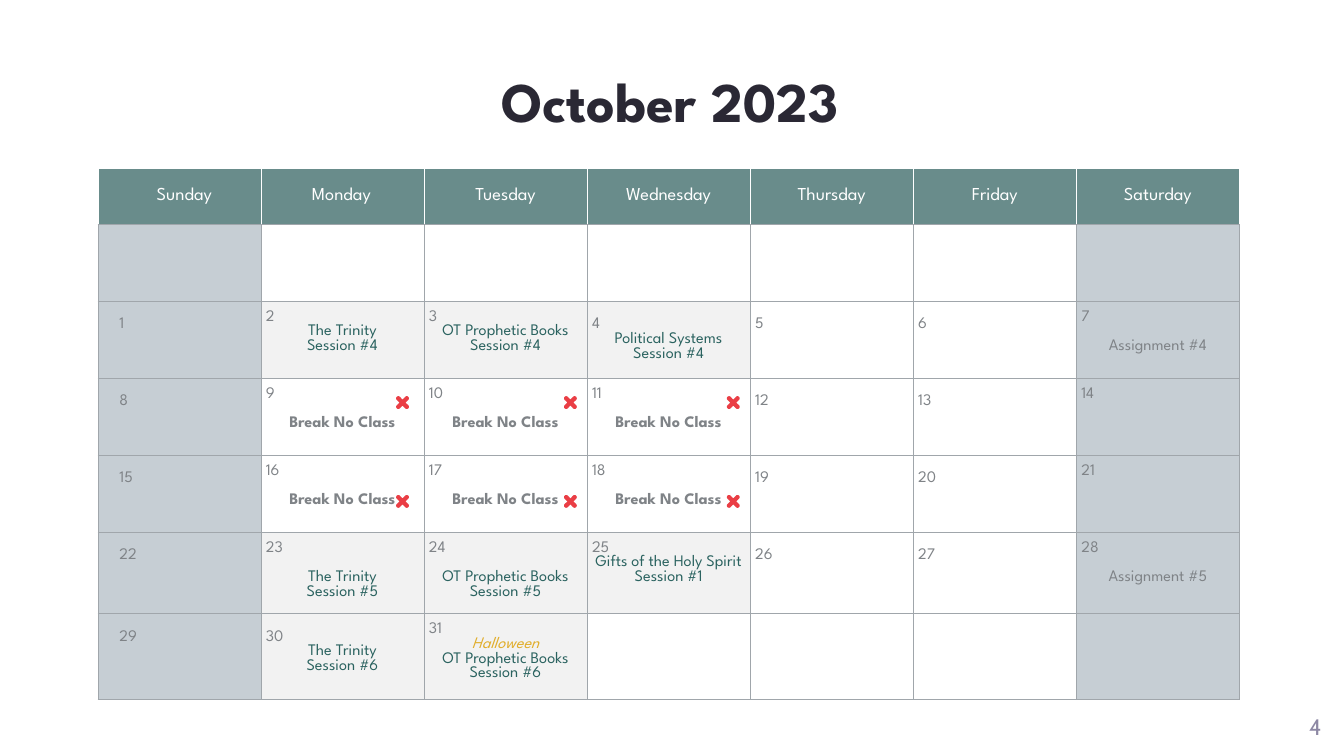
from math import cos, pi, sin

from lxml.etree import SubElement
from pptx import Presentation
from pptx.dml.color import RGBColor
from pptx.enum.text import MSO_ANCHOR, PP_ALIGN
from pptx.oxml.ns import qn
from pptx.util import Cm, Pt

FONT = "League Spartan"
INK = RGBColor(0x2A, 0x28, 0x34)
LILAC = RGBColor(0x8D, 0x88, 0xA4)
WHITE = RGBColor(0xFF, 0xFF, 0xFF)
HEADER = RGBColor(0x69, 0x8C, 0x8B)
WEEKEND = RGBColor(0xC6, 0xCE, 0xD4)
CLASS_DAY = RGBColor(0xF2, 0xF2, 0xF2)
GRID = RGBColor(0xA0, 0xA6, 0xAB)
GREY = RGBColor(0x7F, 0x83, 0x87)
GREEN = RGBColor(0x2B, 0x63, 0x60)
GOLD = RGBColor(0xE1, 0xAE, 0x2C)
RED = RGBColor(0xEA, 0x3E, 0x45)

DAYS = ["Sunday", "Monday", "Tuesday", "Wednesday", "Thursday", "Friday", "Saturday"]
CLASSES = {
    2: ["The Trinity", "Session #4"],
    3: ["OT Prophetic Books", "Session #4"],
    4: ["Political Systems", "Session #4"],
    23: ["The Trinity", "Session #5"],
    24: ["OT Prophetic Books", "Session #5"],
    25: ["Gifts of the Holy Spirit", "Session #1"],
    30: ["The Trinity", "Session #6"],
    31: ["Halloween", "OT Prophetic Books", "Session #6"],
}
BREAKS = [9, 10, 11, 16, 17, 18]
ASSIGNMENTS = {7: "Assignment #4", 28: "Assignment #5"}
SPACED = BREAKS + [7, 23, 24, 28]  # one line of space under the date
LOW_DATES = [4, 30]
LOW_COLUMNS = [0, 4, 5]


def add_text(p, text, size, color, align=PP_ALIGN.LEFT, font=FONT, **extra):
    p.alignment = align
    r = p.add_run()
    r.text = text
    r.font.color.rgb = color
    for name, value in {"name": font, "size": Pt(size), **extra}.items():
        setattr(r.font, name, value)


def format_cell(cell, fill, borders, margins):
    cell.fill.solid()
    cell.fill.fore_color.rgb = fill
    for side, value in zip(("left", "top", "right", "bottom"), margins):
        setattr(cell, f"margin_{side}", Cm(value))
    tcPr = cell._tc.get_or_add_tcPr()
    for i, (side, (color, width)) in enumerate(zip("LRTB", borders)):
        ln = tcPr.makeelement(qn(f"a:ln{side}"), {"w": str(Pt(width))})
        SubElement(SubElement(ln, qn("a:solidFill")), qn("a:srgbClr"), val=str(color))
        tcPr.insert(i, ln)


prs = Presentation()
prs.slide_width, prs.slide_height = Cm(67.74), Cm(38.1)
s = prs.slides.add_slide(prs.slide_layouts[5])

# Title
title = s.shapes.title
title.left, title.top, title.width, title.height = Cm(5.08), Cm(3.05), Cm(57.4), Cm(4.01)
title.text_frame.vertical_anchor = MSO_ANCHOR.MIDDLE
add_text(title.text_frame.paragraphs[0], "October 2023", 80, INK, PP_ALIGN.CENTER, bold=True)

# Page number
tf = s.shapes.add_textbox(Cm(60.88), Cm(35.15), Cm(6.93), Cm(2.29)).text_frame
tf.word_wrap = True
tf.vertical_anchor = MSO_ANCHOR.MIDDLE
tf.margin_right = Cm(1.19)
tf.paragraphs[0].line_spacing = 1.5
add_text(tf.paragraphs[0], "4", 32, LILAC, PP_ALIGN.RIGHT, "Cabin")

# Calendar grid
table = s.shapes.add_table(7, 7, Cm(4.93), Cm(8.46), Cm(57.54), Cm(26.12)).table
table.first_row = table.horz_banding = False
for column in table.columns:
    column.width = Cm(8.22)
for i, row in enumerate(table.rows):
    row.height = Cm(3.88 if i else 2.84)

# Weekday header
for col, day in enumerate(DAYS):
    cell = table.cell(0, col)
    format_cell(cell, HEADER, [(WHITE, 1)] * 3 + [(GRID, 0.75)],
                (0 if col else 0.6, 0.1, 0 if col > 1 else 0.1, 0.1))
    cell.vertical_anchor = MSO_ANCHOR.MIDDLE
    add_text(cell.text_frame.paragraphs[0], day, 26, WHITE, PP_ALIGN.CENTER)

# Dates: the 1st is the Sunday of the second week row
for week in range(6):
    for col in range(7):
        date = 7 * (week - 1) + col + 1
        cell = table.cell(week + 1, col)
        fill = WEEKEND if col in (0, 6) else CLASS_DAY if date in CLASSES else WHITE
        low = col in LOW_COLUMNS or date in LOW_DATES
        format_cell(cell, fill, [(GRID, 0.75)] * 4,
                    (0.25 if col else 1.09, 0.82 if low else 0.44, 0.25, 0))
        if not 1 <= date <= 31:
            continue
        tf = cell.text_frame
        add_text(tf.paragraphs[0], str(date), 23, GREY)

        if date in CLASSES:
            notes, color = CLASSES[date], GREEN
        elif date in BREAKS:
            notes, color = ["Break No Class"], GREY
        else:
            notes, color = [ASSIGNMENTS[date]] if date in ASSIGNMENTS else [], GREY
        for i, note in enumerate(notes):
            p = tf.add_paragraph()
            if i == 0 and date in SPACED:
                p.space_before = Pt(21)
            holiday = note == "Halloween"
            add_text(p, note, 23, GOLD if holiday else color, PP_ALIGN.CENTER,
                     bold=date in BREAKS, italic=holiday)

# Red crosses on break days: four round-ended arms joined at inner notches
ARM, RADIUS, NOTCH = 0.3, 0.11, 0.15
for y in (20.29, 25.27):
    for x in (20.29, 28.75, 36.96):
        points = []
        for k in range(4):
            a = pi / 4 + k * pi / 2
            for step in range(-6, 7):
                b = a + step * pi / 12
                points.append((x + ARM * cos(a) + RADIUS * cos(b),
                               y + ARM * sin(a) + RADIUS * sin(b)))
            points.append((x + NOTCH * cos(a + pi / 4), y + NOTCH * sin(a + pi / 4)))
        points = [(Cm(px), Cm(py)) for px, py in points]
        builder = s.shapes.build_freeform(*points[0])
        builder.add_line_segments(points[1:], close=True)
        cross = builder.convert_to_shape()
        cross.shadow.inherit = False
        cross.fill.solid()
        cross.fill.fore_color.rgb = RED
        cross.line.fill.background()

prs.save("out.pptx")
